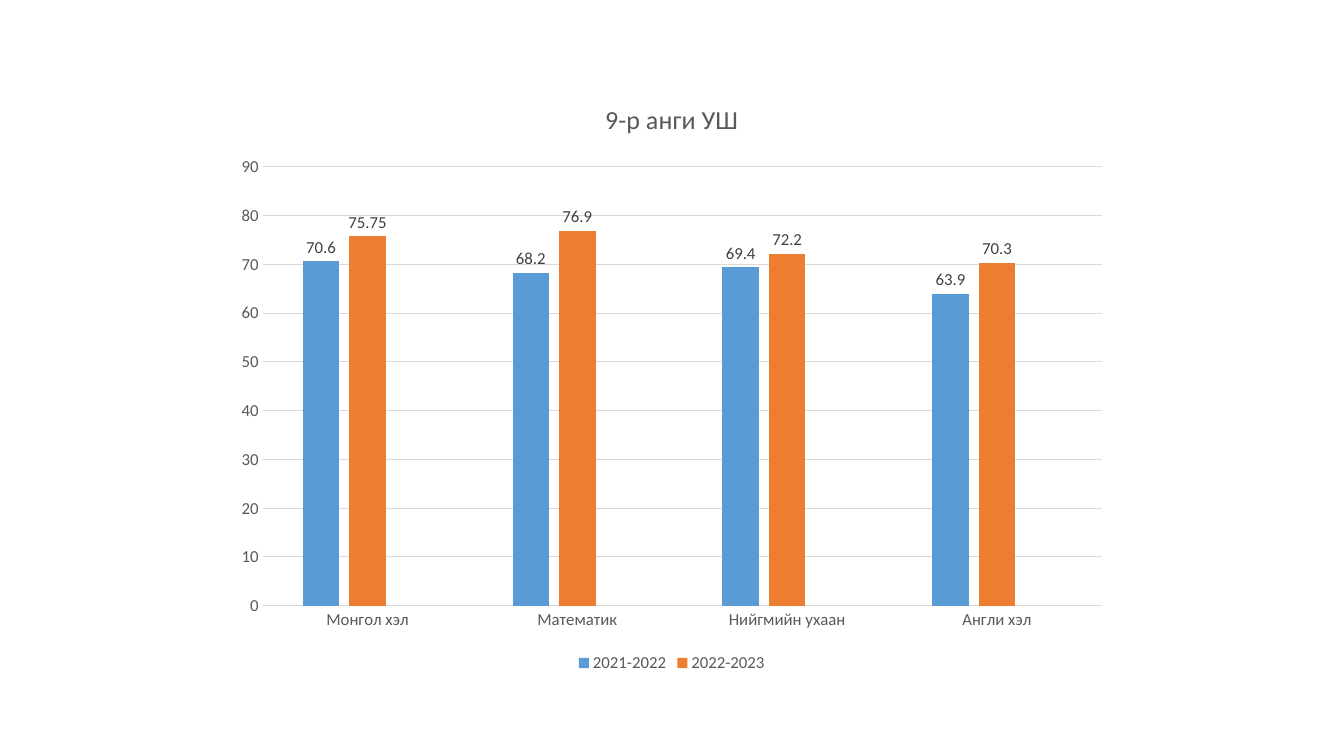
from dataclasses import dataclass

from lxml.etree import SubElement
from pptx import Presentation
from pptx.chart.data import CategoryChartData
from pptx.dml.color import RGBColor
from pptx.enum.chart import (XL_CHART_TYPE, XL_LABEL_POSITION,
                             XL_LEGEND_POSITION, XL_TICK_MARK)
from pptx.oxml.ns import qn
from pptx.util import Cm, Pt


@dataclass(frozen=True)
class Theme:
    font: str = "Calibri"
    text: str = "595959"
    label: str = "404040"
    rule: str = "D9D9D9"
    bars: tuple = ("5B9BD5", "ED7D31", "A5A5A5")
    title_size: float = 18.6
    text_size: float = 12
    rule_width: float = 0.75


THEME = Theme()
TITLE = "9-р анги УШ"
SUBJECTS = ("Монгол хэл", "Математик", "Нийгмийн ухаан", "Англи хэл")
SPARE_YEAR = "Series 3"  # keeps an empty slot beside each pair of bars
SCORES = {
    "2021-2022": (70.6, 68.2, 69.4, 63.9),
    "2022-2023": (75.75, 76.9, 72.2, 70.3),
    SPARE_YEAR: (None,) * len(SUBJECTS),
}


def style_font(font, size, color):
    font.name = THEME.font
    font.size = Pt(size)
    font.bold = False
    font.color.rgb = RGBColor.from_string(color)


def style_rule(line):
    line.color.rgb = RGBColor.from_string(THEME.rule)
    line.width = Pt(THEME.rule_width)


def style_title(chart):
    chart.has_title = True
    frame = chart.chart_title.text_frame
    frame.text = TITLE
    style_font(frame.paragraphs[0].runs[0].font, THEME.title_size, THEME.text)
    chart.chart_title.include_in_layout = False


def style_axes(chart):
    for axis in (chart.category_axis, chart.value_axis):
        axis.major_tick_mark = axis.minor_tick_mark = XL_TICK_MARK.NONE
        style_font(axis.tick_labels.font, THEME.text_size, THEME.text)
    style_rule(chart.category_axis.format.line)
    scale = chart.value_axis
    scale.format.line.fill.background()
    scale.has_major_gridlines = True
    style_rule(scale.major_gridlines.format.line)


def style_bars(plot):
    plot.gap_width = 219
    plot.overlap = -27
    plot.vary_by_categories = False
    for series, color in zip(plot.series, THEME.bars):
        series.format.fill.solid()
        series.format.fill.fore_color.rgb = RGBColor.from_string(color)
        series.invert_if_negative = False
        labels = series.data_labels
        labels.show_value = True
        labels.position = XL_LABEL_POSITION.OUTSIDE_END
        style_font(labels.font, THEME.text_size, THEME.label)


def style_legend(chart):
    chart.has_legend = True
    legend = chart.legend
    legend.position = XL_LEGEND_POSITION.BOTTOM
    legend.include_in_layout = False
    style_font(legend.font, THEME.text_size, THEME.text)
    # Leave the empty series out of the legend
    root = legend._element
    entry = SubElement(root, qn("c:legendEntry"))
    SubElement(entry, qn("c:idx")).set("val", str(list(SCORES).index(SPARE_YEAR)))
    SubElement(entry, qn("c:delete")).set("val", "1")
    root.find(qn("c:legendPos")).addnext(entry)


def add_score_chart(page, left, top, width, height):
    data = CategoryChartData()
    data.categories = SUBJECTS
    for year, values in SCORES.items():
        data.add_series(year, values)
    chart = page.shapes.add_chart(XL_CHART_TYPE.COLUMN_CLUSTERED,
                                  left, top, width, height, data).chart
    chart.font.name = THEME.font
    style_title(chart)
    style_axes(chart)
    style_bars(chart.plots[0])
    style_legend(chart)


def main():
    deck = Presentation()
    deck.slide_width, deck.slide_height = Cm(33.87), Cm(19.05)
    page = deck.slides.add_slide(deck.slide_layouts[6])
    add_score_chart(page, Cm(5.64), Cm(2), Cm(22.58), Cm(15.06))
    deck.save("out.pptx")


if __name__ == "__main__":
    main()
